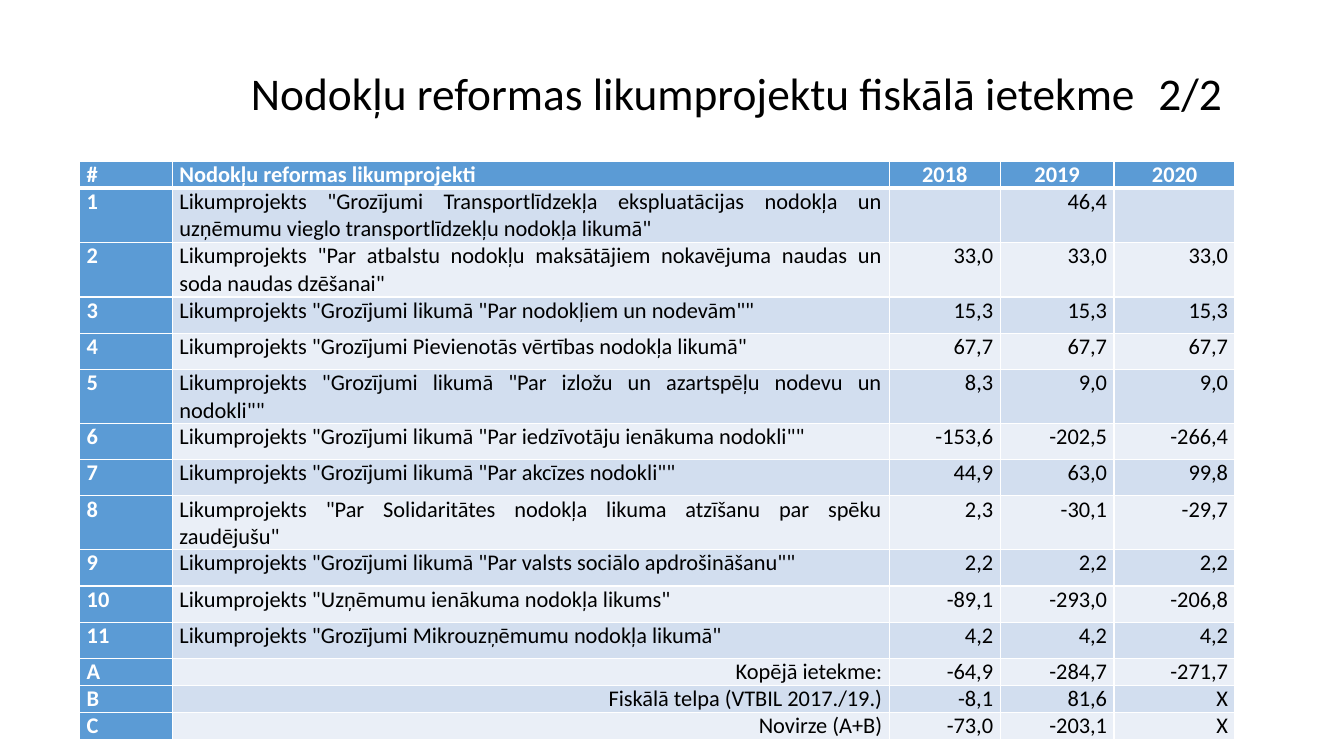
from lxml.etree import SubElement
from pptx import Presentation
from pptx.dml.color import RGBColor as Color
from pptx.enum.text import MSO_ANCHOR as Anchor, PP_ALIGN as Align
from pptx.oxml.ns import qn
from pptx.util import Inches, Pt

THEME = {
    "font": "Calibri", "title_size": 32.4, "table_size": 16,
    "text": "000000", "inverse": "FFFFFF", "accent": "5B9BD5",
    "bands": ("EAEFF7", "D2DEEF"),
    "rule": 1, "header_rule": 3,
}
COLUMNS = (0.92, 7.11, 1.1, 1.13, 1.2)
SINGLE, MEDIUM, DOUBLE = 0.18, 0.36, 0.54
ROWS = (
    ("#", "Nodokļu reformas likumprojekti", "2018", "2019", "2020"),
    ("1", 'Likumprojekts "Grozījumi Transportlīdzekļa ekspluatācijas nodokļa un '
          'uzņēmumu vieglo transportlīdzekļu nodokļa likumā"', "", "46,4", ""),
    ("2", 'Likumprojekts "Par atbalstu nodokļu maksātājiem nokavējuma naudas un '
          'soda naudas dzēšanai"', "33,0", "33,0", "33,0"),
    ("3", 'Likumprojekts "Grozījumi likumā "Par nodokļiem un nodevām""',
     "15,3", "15,3", "15,3"),
    ("4", 'Likumprojekts "Grozījumi Pievienotās vērtības nodokļa likumā"',
     "67,7", "67,7", "67,7"),
    ("5", 'Likumprojekts "Grozījumi likumā "Par izložu un azartspēļu nodevu un '
          'nodokli""', "8,3", "9,0", "9,0"),
    ("6", 'Likumprojekts "Grozījumi likumā "Par iedzīvotāju ienākuma nodokli""',
     "-153,6", "-202,5", "-266,4"),
    ("7", 'Likumprojekts "Grozījumi likumā "Par akcīzes nodokli""',
     "44,9", "63,0", "99,8"),
    ("8", 'Likumprojekts "Par Solidaritātes nodokļa likuma atzīšanu par spēku '
          'zaudējušu"', "2,3", "-30,1", "-29,7"),
    ("9", 'Likumprojekts "Grozījumi likumā "Par valsts sociālo apdrošināšanu""',
     "2,2", "2,2", "2,2"),
    ("10", 'Likumprojekts "Uzņēmumu ienākuma nodokļa likums"',
     "-89,1", "-293,0", "-206,8"),
    ("11", 'Likumprojekts "Grozījumi Mikrouzņēmumu nodokļa likumā"',
     "4,2", "4,2", "4,2"),
    ("A", "Kopējā ietekme:", "-64,9", "-284,7", "-271,7"),
    ("B", "Fiskālā telpa (VTBIL 2017./19.)", "-8,1", "81,6", "X"),
    ("C", "Novirze (A+B)", "-73,0", "-203,1", "X"),
)
HEIGHTS = [SINGLE] + [DOUBLE] * 2 + [MEDIUM] * 9 + [SINGLE] * 3
FIRST_TOTAL = 12


def write(para, text, size, color, bold, align):
    para.text, para.alignment = text, align
    font_format = {"name": THEME["font"], "size": Pt(size), "bold": bold}
    for span in para.runs or [para]:
        for name, value in font_format.items():
            setattr(span.font, name, value)
        span.font.color.rgb = Color.from_string(color)


def add_borders(cell, top, bottom):
    """Draw white rules on all sides; widths are in points."""
    properties = cell._tc.get_or_add_tcPr()
    widths = {"lnL": THEME["rule"], "lnR": THEME["rule"], "lnT": top, "lnB": bottom}
    for position, (side, width) in enumerate(widths.items()):
        line = SubElement(properties, qn(f"a:{side}"), w=str(Pt(width)))
        fill = SubElement(line, qn("a:solidFill"))
        SubElement(fill, qn("a:srgbClr"), val=THEME["inverse"])
        properties.insert(position, line)


deck = Presentation()
deck.slide_width, deck.slide_height = Inches(13.33), Inches(7.5)
page = deck.slides.add_slide(deck.slide_layouts[6])

title = page.shapes.add_textbox(Inches(2.39), Inches(0.4), Inches(10.02), Inches(1.11))
frame = title.text_frame
frame.word_wrap, frame.vertical_anchor = True, Anchor.MIDDLE
frame.paragraphs[0].line_spacing = 0.9
write(frame.paragraphs[0], "Nodokļu reformas likumprojektu fiskālā ietekme\t2/2",
      THEME["title_size"], THEME["text"], False, Align.JUSTIFY)

table = page.shapes.add_table(
    len(ROWS), len(COLUMNS), Inches(0.79), Inches(1.6),
    Inches(sum(COLUMNS)), Inches(sum(HEIGHTS))).table
for column, width in zip(table.columns, COLUMNS):
    column.width = Inches(width)
for row, height in zip(table.rows, HEIGHTS):
    row.height = Inches(height)

cell_format = {"margin_left": Inches(0.07), "margin_right": Inches(0.07),
               "margin_top": 0, "margin_bottom": 0}
for r, values in enumerate(ROWS):
    for c, value in enumerate(values):
        cell = table.cell(r, c)
        for name, setting in cell_format.items():
            setattr(cell, name, setting)
        heading = r == 0 or c == 0
        cell.fill.solid()
        cell.fill.fore_color.rgb = Color.from_string(
            THEME["accent"] if heading else THEME["bands"][r % 2])
        if c == 0 or (c == 1 and r < FIRST_TOTAL):
            align = Align.JUSTIFY
        else:
            align = Align.CENTER if r == 0 else Align.RIGHT
        write(cell.text_frame.paragraphs[0], value, THEME["table_size"],
              THEME["inverse" if heading else "text"], heading, align)
        add_borders(cell, THEME["header_rule" if r == 1 else "rule"],
                    THEME["header_rule" if r == 0 else "rule"])

deck.save("out.pptx")
